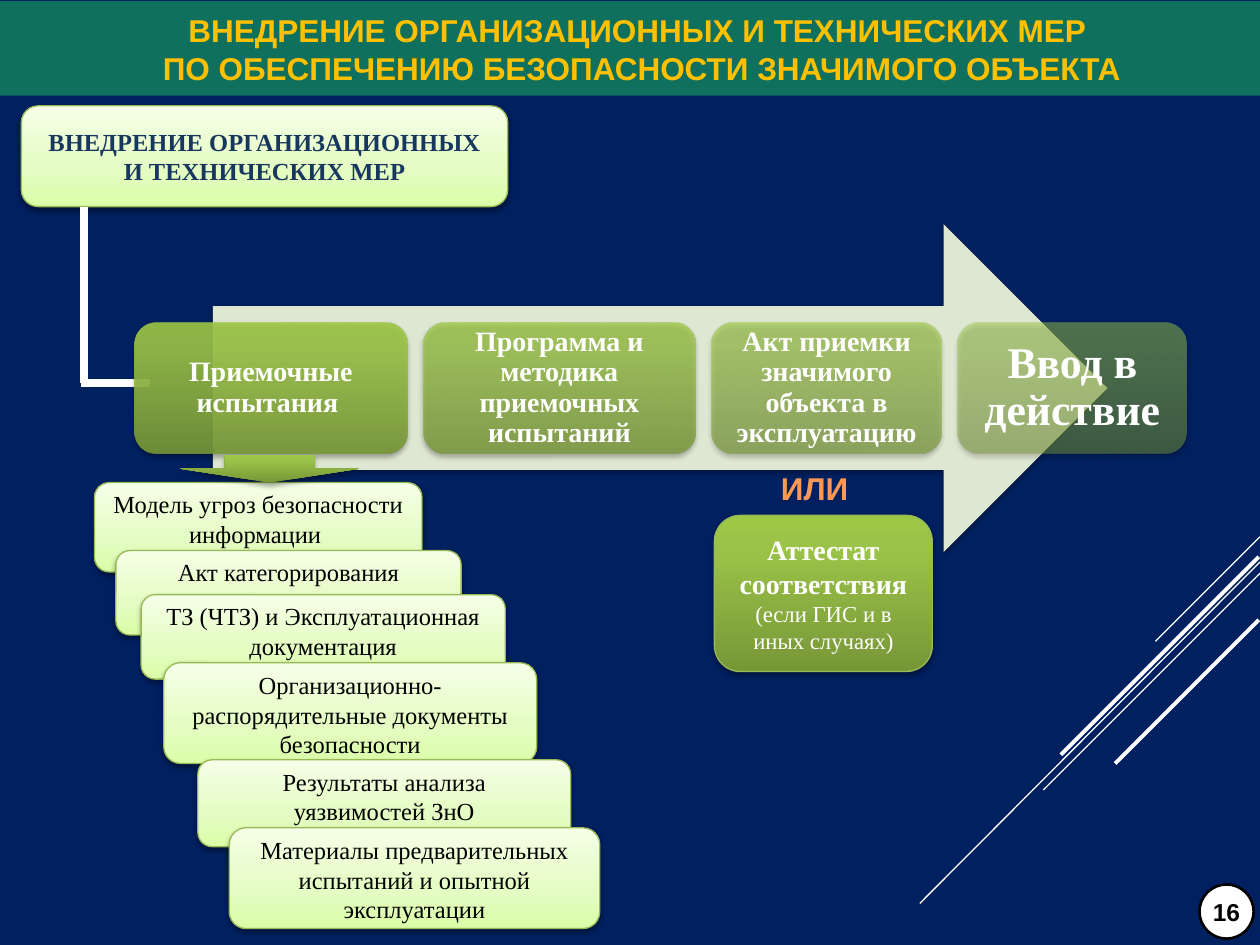
from lxml import etree
from pptx import Presentation
from pptx.dml.color import RGBColor
from pptx.enum.shapes import MSO_CONNECTOR, MSO_SHAPE
from pptx.enum.text import MSO_ANCHOR, PP_ALIGN
from pptx.oxml.ns import qn
from pptx.util import Inches, Pt

RECT = MSO_SHAPE.RECTANGLE
ROUNDED = MSO_SHAPE.ROUNDED_RECTANGLE
STAR = MSO_SHAPE.STAR_16_POINT
RIGHT_ARROW = MSO_SHAPE.RIGHT_ARROW
DOWN_ARROW = MSO_SHAPE.DOWN_ARROW
STRAIGHT = MSO_CONNECTOR.STRAIGHT
TOP, MIDDLE = MSO_ANCHOR.TOP, MSO_ANCHOR.MIDDLE
LEFT, CENTER = PP_ALIGN.LEFT, PP_ALIGN.CENTER

NAVY = RGBColor(0x00, 0x20, 0x60)
TEAL = RGBColor(0x0F, 0x70, 0x5D)
GOLD = RGBColor(0xFF, 0xC0, 0x00)
WHITE = RGBColor(0xFF, 0xFF, 0xFF)
BLACK = RGBColor(0x00, 0x00, 0x00)
INK = RGBColor(0x17, 0x37, 0x5E)
ORANGE = RGBColor(0xFF, 0x98, 0x56)
EDGE = RGBColor(0x98, 0xB9, 0x55)
PALE = RGBColor(0xDE, 0xE7, 0xD1)
LIGHT_STOPS = (
    (0, RGBColor(0xDA, 0xFD, 0xA7)),
    (35, RGBColor(0xE4, 0xFC, 0xC2)),
    (100, RGBColor(0xF5, 0xFF, 0xE7)),
)
GREEN_STOPS = (
    (0, RGBColor(0x77, 0x97, 0x37)),
    (80, RGBColor(0x9B, 0xC3, 0x48)),
    (100, RGBColor(0x9D, 0xC7, 0x46)),
)

SERIF, SANS = "Times New Roman", "Arial"

RAYS = [
    (10, 4.26, 9.17, 5.09, 0.75),
    (10, 4.46, 7.3, 7.17, 0.75),
    (10, 4.55, 8.28, 6.27, 0.75),
    (9.99, 4.42, 8.42, 5.99, 2.25),
    (9.99, 4.92, 8.85, 6.06, 2.25),
]
STEPS = [
    ("Приемочные испытания ", 2.16, 90, 16, 0.07),
    ("Программа и методика приемочных испытаний", 2.16, 77, 16, 0.07),
    ("Акт приемки значимого объекта в эксплуатацию", 1.82, 63, 16, 0.07),
    ("Ввод в действие", 1.82, 50, 25, 0.1),
]
DOCUMENTS = [
    ("Модель угроз безопасности информации ", 0.75, 3.83, 2.6, 0.71),
    ("Акт категорирования", 0.92, 4.37, 2.74, 0.67),
    ("ТЗ (ЧТЗ) и Эксплуатационная документация", 1.12, 4.72, 2.89, 0.67),
    ("Организационно-распорядительные документы безопасности",
     1.3, 5.26, 2.96, 0.8),
    ("Результаты анализа уязвимостей ЗнО", 1.57, 6.03, 2.96, 0.69),
    ("Материалы предварительных испытаний и опытной эксплуатации",
     1.82, 6.57, 2.94, 0.8),
]


def add_color(parent, color, alpha):
    node = etree.SubElement(parent, qn("a:srgbClr"), val=str(color))
    if alpha < 100:
        etree.SubElement(node, qn("a:alpha"), val=str(alpha * 1000))


def set_gradient(shape, stops, alpha=100):
    shape.fill.background()
    properties = shape._element.spPr
    gradient = etree.Element(qn("a:gradFill"), rotWithShape="1")
    stop_list = etree.SubElement(gradient, qn("a:gsLst"))
    for position, color in stops:
        stop = etree.SubElement(stop_list, qn("a:gs"), pos=str(position * 1000))
        add_color(stop, color, alpha)
    etree.SubElement(gradient, qn("a:lin"), ang="16200000", scaled="0")
    properties.replace(properties.find(qn("a:noFill")), gradient)


def add_shadow(shape, alpha=35, distance=1.8):
    effects = shape._element.spPr.find(qn("a:effectLst"))
    shadow = etree.SubElement(
        effects, qn("a:outerShdw"), blurRad=str(Pt(3.1)),
        dist=str(Pt(distance)), dir="5400000", rotWithShape="0")
    add_color(shadow, BLACK, alpha)


def add_box(page, kind, left, top, width, height, fill=None, line=None, weight=0.75):
    box = page.shapes.add_shape(
        kind, Inches(left), Inches(top), Inches(width), Inches(height))
    box.shadow.inherit = False
    if fill is not None:
        box.fill.solid()
        box.fill.fore_color.rgb = fill
    if line is None:
        box.line.fill.background()
    else:
        box.line.color.rgb = line
        box.line.width = Pt(weight)
    return box


def add_line(page, x1, y1, x2, y2, weight):
    line = page.shapes.add_connector(
        STRAIGHT, Inches(x1), Inches(y1), Inches(x2), Inches(y2))
    line.line.color.rgb = WHITE
    line.line.width = Pt(weight)
    etree.SubElement(line._element.spPr, qn("a:effectLst"))


def format_para(para, size, color, bold=False, font=SERIF, align=CENTER):
    para.alignment = align
    for span in para.runs:
        span.font.name = font
        span.font.size = Pt(size)
        span.font.bold = bold
        span.font.color.rgb = color


def write(box, text, size, color, bold=False, font=SERIF,
          align=CENTER, anchor=MIDDLE, wrap=True):
    frame = box.text_frame
    frame.text = text
    frame.word_wrap = wrap
    frame.vertical_anchor = anchor
    format_para(frame.paragraphs[0], size, color, bold, font, align)
    return frame


def add_label(page, left, top, width, height, text, *style):
    label = page.shapes.add_textbox(
        Inches(left), Inches(top), Inches(width), Inches(height))
    return write(label, text, *style)


def set_margins(frame, margin):
    frame.margin_left = frame.margin_right = Inches(margin)
    frame.margin_top = frame.margin_bottom = Inches(margin)


def add_card(page, text, left, top, width, height,
             anchor=TOP, color=BLACK, bold=False):
    card = add_box(page, ROUNDED, left, top, width, height, line=EDGE)
    set_gradient(card, LIGHT_STOPS)
    add_shadow(card, 38, 1.6)
    frame = write(card, text, 14, color, bold, anchor=anchor)
    frame.margin_top = frame.margin_bottom = Inches(0.02)


def add_header(page):
    banner = add_box(page, RECT, 0, 0.01, 10, 0.75, TEAL)
    title = ("ВНЕДРЕНИЕ ОРГАНИЗАЦИОННЫХ И ТЕХНИЧЕСКИХ МЕР \v"
             "ПО ОБЕСПЕЧЕНИЮ БЕЗОПАСНОСТИ ЗНАЧИМОГО ОБЪЕКТА")
    frame = write(banner, title, 18, GOLD, True, SANS)
    set_margins(frame, 0.05)
    frame.paragraphs[0]._p.get_or_add_pPr().set("marL", str(Inches(0.19)))
    badge = add_box(page, STAR, 9.52, 7.02, 0.43, 0.43, WHITE, BLACK, 1.5)
    badge.adjustments[0] = 0.5
    write(badge, "16", 14, BLACK, True, SANS, wrap=False)


def add_steps(page):
    add_shadow(add_box(page, RIGHT_ARROW, 1.69, 1.78, 7.1, 2.6, PALE))
    left, top, height, gap, inset = 1.07, 2.56, 1.04, 0.13, 0.05
    for text, width, alpha, size, margin in STEPS:
        step = add_box(page, ROUNDED, left, top, width, height)
        set_gradient(step, GREEN_STOPS, alpha)
        add_shadow(step)
        frame = add_label(page, left + inset, top + inset, width - 2 * inset,
                          height - 2 * inset, text, size, WHITE, True)
        set_margins(frame, margin)
        frame.paragraphs[0].line_spacing = 0.9
        left += width + gap


def add_certificate(page):
    certificate = add_box(page, ROUNDED, 5.67, 4.09, 1.73, 1.24, line=EDGE)
    set_gradient(certificate, GREEN_STOPS)
    add_shadow(certificate)
    frame = write(certificate, "Аттестат соответствия", 16, WHITE, True)
    condition = frame.add_paragraph()
    condition.text = "(если ГИС и в иных случаях)"
    format_para(condition, 13, WHITE)
    add_label(page, 6.1, 3.67, 0.94, 0.4, "ИЛИ", 18, ORANGE, True, SANS, LEFT, TOP)


def main():
    deck = Presentation()
    deck.slide_width, deck.slide_height = Inches(10), Inches(7.5)
    page = deck.slides.add_slide(deck.slide_layouts[6])
    page.background.fill.solid()
    page.background.fill.fore_color.rgb = NAVY
    for ray in RAYS:
        add_line(page, *ray)
    add_header(page)
    add_card(page, "ВНЕДРЕНИЕ ОРГАНИЗАЦИОННЫХ И ТЕХНИЧЕСКИХ МЕР",
             0.17, 0.84, 3.86, 0.8, MIDDLE, INK, True)
    add_line(page, 0.67, 1.64, 0.67, 3.04, 4.5)
    add_line(page, 0.64, 3.04, 1.19, 3.04, 4.5)
    add_steps(page)
    for document in DOCUMENTS:
        add_card(page, *document)
    pointer = add_box(page, DOWN_ARROW, 1.43, 3.61, 1.42, 0.22)
    set_gradient(pointer, GREEN_STOPS)
    add_shadow(pointer)
    add_certificate(page)
    deck.save("out.pptx")


if __name__ == "__main__":
    main()
